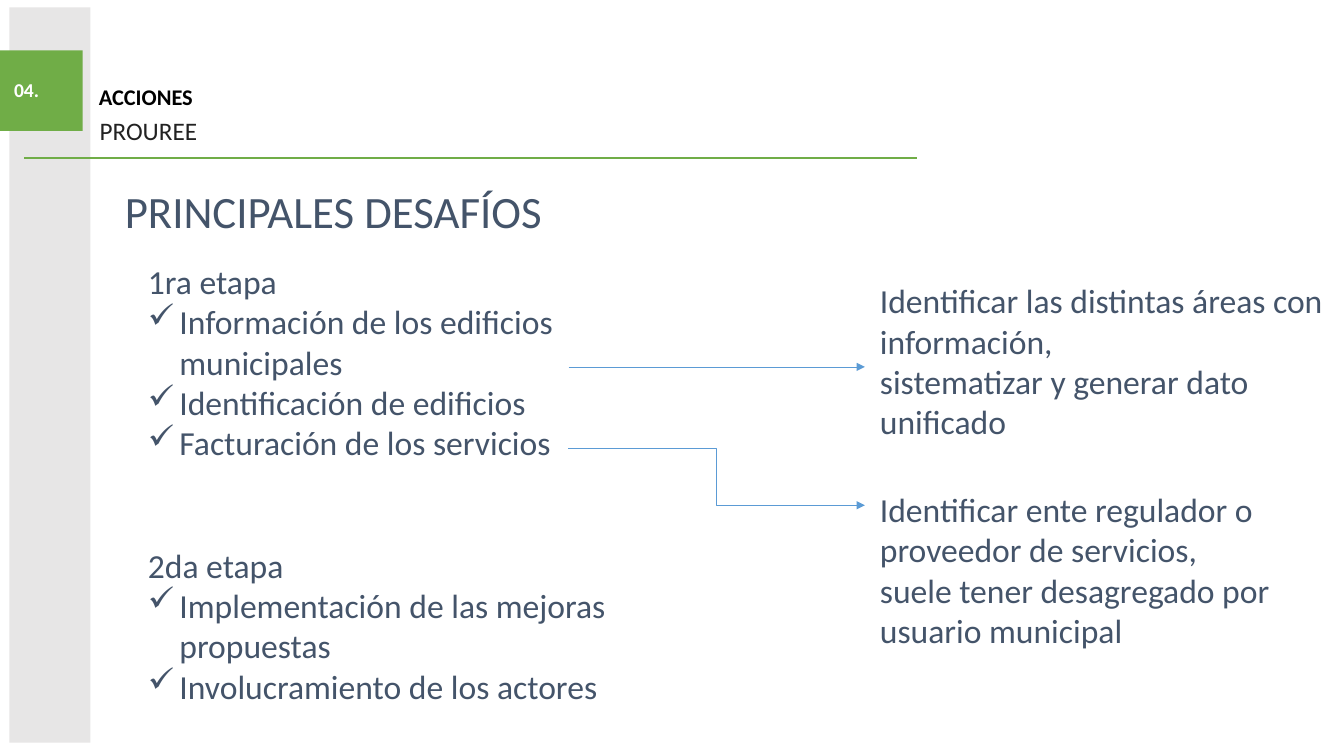
"""Build the slide on the main challenges of the PROUREE programme."""
from dataclasses import dataclass

from lxml.etree import SubElement
from pptx import Presentation
from pptx.dml.color import RGBColor
from pptx.enum.shapes import MSO_CONNECTOR as LINK, MSO_SHAPE
from pptx.enum.text import MSO_ANCHOR as ANCHOR, PP_ALIGN
from pptx.oxml.ns import qn
from pptx.util import Pt


@dataclass(frozen=True)
class Theme:
    font: str = "Calibri"
    band: str = "E7E6E6"
    green: str = "70AD47"
    blue: str = "5B9BD5"
    slate: str = "44546A"
    ink: str = "222222"
    black: str = "000000"
    white: str = "FFFFFF"
    number: int = 14
    title: int = 16
    subtitle: int = 18
    body: int = 24
    heading: int = 32
    indent: float = 22.5
    stage_gap: float = 58.5


def write(frame, *lines, size, color, font, bold=False, anchor=ANCHOR.TOP,
          wrap=True, spacing=1.0, left=7.2):
    """Fill a text frame with one formatted paragraph per line."""
    frame.word_wrap = wrap
    frame.vertical_anchor = anchor
    frame.margin_left = Pt(left)
    for index, line in enumerate(lines):
        paragraph = frame.add_paragraph() if index else frame.paragraphs[0]
        paragraph.alignment = PP_ALIGN.LEFT
        paragraph.line_spacing = spacing
        run = paragraph.add_run()
        run.text = line
        run.font.name = font
        run.font.size = Pt(size)
        run.font.bold = bold
        run.font.color.rgb = RGBColor.from_string(color)
    return frame.paragraphs


class SlideBuilder:
    """Add themed elements to the current slide."""

    def __init__(self, slide, theme):
        self.slide = slide
        self.theme = theme

    def block(self, x, y, width, height, fill):
        """Add a plain rectangle."""
        block = self.slide.shapes.add_shape(
            MSO_SHAPE.RECTANGLE, Pt(x), Pt(y), Pt(width), Pt(height))
        block.shadow.inherit = False
        block.fill.solid()
        block.fill.fore_color.rgb = RGBColor.from_string(fill)
        block.line.fill.background()
        return block

    def title(self, text, x, y, width, height, **style):
        """Place and fill the title placeholder."""
        title = self.slide.shapes.title
        title.left, title.top = Pt(x), Pt(y)
        title.width, title.height = Pt(width), Pt(height)
        write(title.text_frame, text, font=self.theme.font, **style)

    def text(self, lines, x, y, width, height, **style):
        """Add a text box and return its paragraphs."""
        box = self.slide.shapes.add_textbox(Pt(x), Pt(y), Pt(width), Pt(height))
        return write(box.text_frame, *lines, font=self.theme.font, **style)

    def check(self, paragraph):
        """Give a paragraph a check mark and a hanging indent."""
        properties = paragraph._p.get_or_add_pPr()
        indent = Pt(self.theme.indent)
        properties.set("marL", str(indent))
        properties.set("indent", str(-indent))
        SubElement(properties, qn("a:buChar"), char="✓")

    def line(self, kind, x1, y1, x2, y2, color, width, arrow=False):
        """Add a connector, with an arrowhead if asked."""
        line = self.slide.shapes.add_connector(
            kind, Pt(x1), Pt(y1), Pt(x2), Pt(y2))
        line.line.color.rgb = RGBColor.from_string(color)
        line.line.width = Pt(width)
        if arrow:
            SubElement(line.line._get_or_add_ln(), qn("a:tailEnd"), type="triangle")
        SubElement(line._element.spPr, qn("a:effectLst"))


def main():
    """Compose and save the slide."""
    theme = Theme()
    deck = Presentation()
    deck.slide_width, deck.slide_height = Pt(960), Pt(540)
    page = SlideBuilder(deck.slides.add_slide(deck.slide_layouts[5]), theme)

    page.block(6.7, 5.3, 57.9, 525.2, theme.band)
    page.line(LINK.STRAIGHT, 17.3, 113, 655.2, 113, theme.green, 1.5)
    badge = page.block(0, 36, 59, 57.6, theme.green)
    write(badge.text_frame, "04.", size=theme.number, color=theme.white,
          font=theme.font, bold=True, anchor=ANCHOR.MIDDLE, spacing=0.9, left=10)

    page.title("ACCIONES", 63.4, 18, 828, 104.4, size=theme.title,
               color=theme.black, bold=True, anchor=ANCHOR.MIDDLE, spacing=0.9)
    page.text(["PROUREE"], 64.1, 78.5, 508.3, 28.8,
              size=theme.subtitle, color=theme.ink)
    page.text(["PRINCIPALES DESAFÍOS"], 82.1, 127.4, 316, 46,
              size=theme.heading, color=theme.slate, wrap=False)

    body = dict(size=theme.body, color=theme.slate)
    stages = {
        "1ra etapa": ["Información de los edificios municipales",
                      "Identificación de edificios",
                      "Facturación de los servicios"],
        "2da etapa": ["Implementación de las mejoras propuestas",
                      "Involucramiento de los actores"],
    }
    lines = [line for stage, tasks in stages.items() for line in (stage, *tasks)]
    paragraphs = page.text(lines, 98.6, 182.9, 365, 356.4, **body)
    for index, (line, paragraph) in enumerate(zip(lines, paragraphs)):
        if line not in stages:
            page.check(paragraph)
        elif index:
            paragraph.space_before = Pt(theme.stage_gap)

    challenges = [
        (196.6, ["Identificar las distintas áreas con información,",
                 "sistematizar y generar dato unificado"]),
        (345.6, ["Identificar ente regulador o proveedor de servicios,",
                 "suele tener desagregado por usuario municipal"]),
    ]
    for top, challenge in challenges:
        page.text(challenge, 621.4, top, 336, 124, **body)

    for kind, start, end in [(LINK.ELBOW, 320.4, 360.9),
                             (LINK.STRAIGHT, 262.1, 262.1)]:
        page.line(kind, 406.1, start, 617.8, end, theme.blue, 0.5, arrow=True)

    deck.save("out.pptx")


if __name__ == "__main__":
    main()
